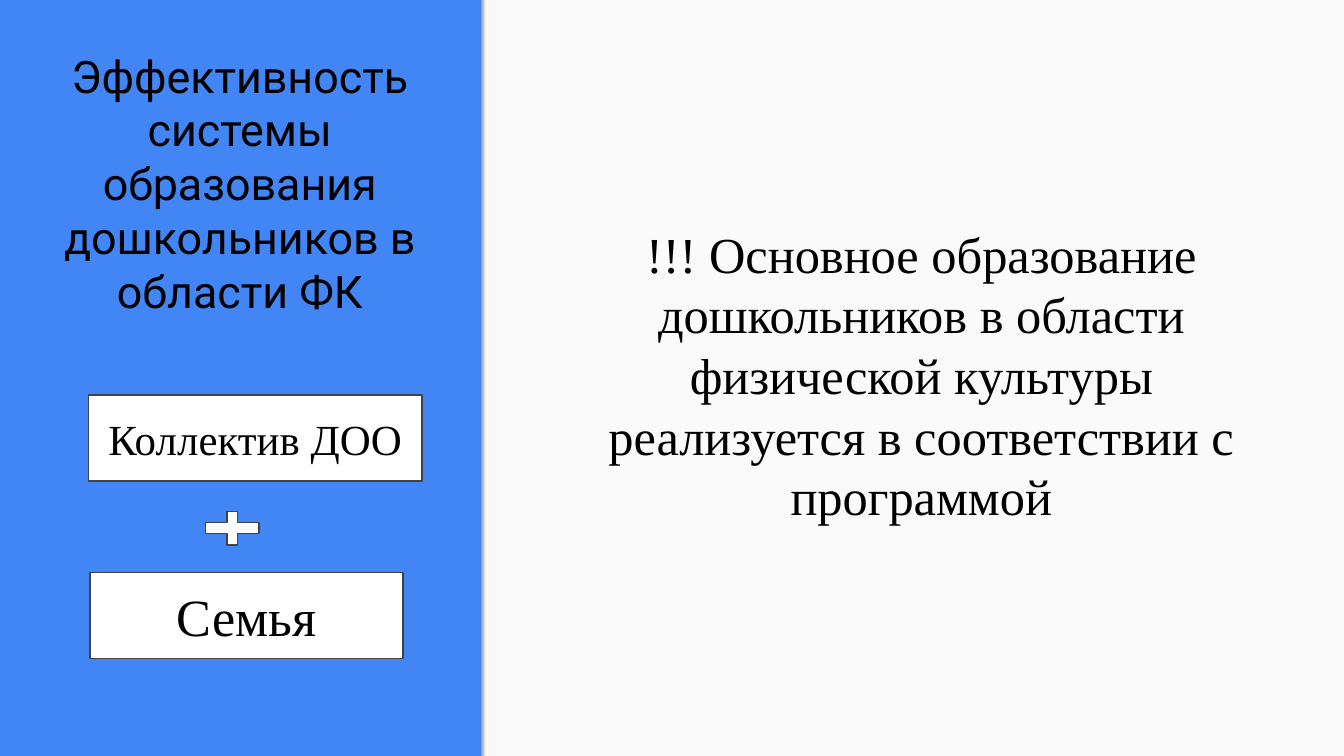
from pptx import Presentation
from pptx.dml.color import RGBColor
from pptx.enum.shapes import MSO_SHAPE
from pptx.enum.text import MSO_ANCHOR, PP_ALIGN
from pptx.util import Inches, Pt

RECT, PLUS = MSO_SHAPE.RECTANGLE, MSO_SHAPE.MATH_PLUS
TOP, MIDDLE, BOTTOM = MSO_ANCHOR.TOP, MSO_ANCHOR.MIDDLE, MSO_ANCHOR.BOTTOM
CENTER = PP_ALIGN.CENTER
SLIDE_W = 10
SLIDE_H = SLIDE_W * 9 / 16
SIDEBAR_W = 3.58
SERIF = "Times New Roman"


def color(hex_code):
    return RGBColor.from_string(hex_code)


def add_block(slide, kind, box, fill, line=None):
    block = slide.shapes.add_shape(kind, *map(Inches, box))
    block.shadow.inherit = False
    block.fill.solid()
    block.fill.fore_color.rgb = color(fill)
    if line:
        block.line.color.rgb = color(line)
        block.line.width = Pt(0.75)
    else:
        block.line.fill.background()
    return block


def write(holder, text, size, font, anchor):
    frame = holder.text_frame
    frame.word_wrap = True
    frame.vertical_anchor = anchor
    frame.margin_left = frame.margin_right = Inches(0.1)
    frame.margin_top = frame.margin_bottom = Inches(0.1)
    frame.text = text
    paragraph = frame.paragraphs[0]
    paragraph.alignment = CENTER
    style = paragraph.runs[0].font
    style.size, style.name = Pt(size), font
    style.color.rgb = color("000000")


def add_text(slide, box, *args):
    write(slide.shapes.add_textbox(*map(Inches, box)), *args)


def build_sidebar(slide, left, top):
    # Heading
    add_text(slide, (left + 0.25, top + 0.39, 3.07, 2.07),
             "Эффективность системы образования дошкольников в области ФК",
             24, "Roboto", BOTTOM)

    # The two partners joined by a plus
    partners = [("Коллектив ДОО", 23, (0.66, 2.94, 2.48, 0.64)),
                ("Семья", 28, (0.67, 4.26, 2.33, 0.64))]
    for label, size, (x, y, w, h) in partners:
        card = add_block(slide, RECT, (left + x, top + y, w, h),
                         "FFFFFF", "424242")
        write(card, label, size, SERIF, MIDDLE)
    plus = add_block(slide, PLUS, (left + 1.46, top + 3.76, 0.54, 0.34),
                     "FFFFFF", "424242")
    plus.adjustments[0] = 0.235


def build_content(slide, left, top, width, height):
    add_block(slide, RECT, (left, top, width, height), "FAFAFA")

    # Soft shade along the sidebar edge
    shade = add_block(slide, RECT, (left, top, 0.12, height), "F9F9F9")
    shade.fill.gradient()
    shade.fill.gradient_angle = 0
    stops = shade.fill.gradient_stops
    for stop, position, tone in zip(stops, (0, 0.3), ("999999", "F9F9F9")):
        stop.position = position
        stop.color.rgb = color(tone)

    # Main statement
    add_text(slide, (left + 0.63, top + 1.56, 5.29, 2.47),
             "!!! Основное образование дошкольников в области физической "
             "культуры реализуется в соответствии с программой",
             27, SERIF, TOP)


def main():
    deck = Presentation()
    deck.slide_width, deck.slide_height = Inches(SLIDE_W), Inches(SLIDE_H)
    slide = deck.slides.add_slide(deck.slide_layouts[6])
    slide.background.fill.solid()
    slide.background.fill.fore_color.rgb = color("4285F4")
    build_content(slide, SIDEBAR_W, 0, SLIDE_W - SIDEBAR_W, SLIDE_H)
    build_sidebar(slide, 0, 0)
    deck.save("out.pptx")


if __name__ == "__main__":
    main()
